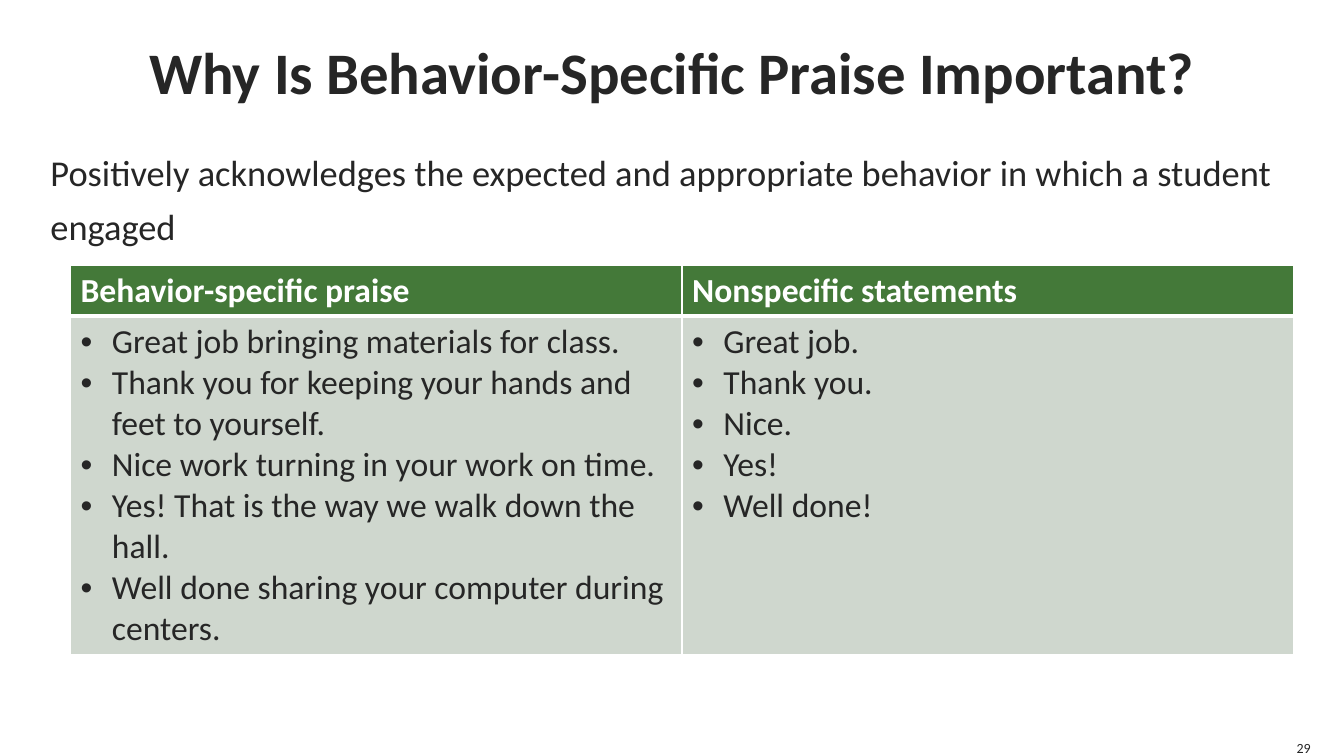
from lxml import etree
from pptx import Presentation
from pptx.dml.color import RGBColor
from pptx.enum.text import MSO_ANCHOR, MSO_AUTO_SIZE, PP_ALIGN
from pptx.oxml.ns import qn
from pptx.util import Inches, Pt

LEFT, CENTER, RIGHT = PP_ALIGN.LEFT, PP_ALIGN.CENTER, PP_ALIGN.RIGHT
TOP, MIDDLE, BOTTOM = MSO_ANCHOR.TOP, MSO_ANCHOR.MIDDLE, MSO_ANCHOR.BOTTOM
NO_AUTOFIT = MSO_AUTO_SIZE.NONE

# Content
TITLE = "Why Is Behavior-Specific Praise Important?"
INTRO = ("Positively acknowledges the expected and appropriate behavior "
         "in which a student engaged")
PRAISE_COLUMNS = {
    "Behavior-specific praise": [
        "Great job bringing materials for class.",
        "Thank you for keeping your hands and feet to yourself.",
        "Nice work turning in your work on time.",
        "Yes! That is the way we walk down the hall.",
        "Well done sharing your computer during centers.",
    ],
    "Nonspecific statements": [
        "Great job.", "Thank you.", "Nice.", "Yes!", "Well done!",
    ],
}
PAGE_NUMBER = "29"

# Look
FONT = "Calibri"
INK, WHITE, GREEN, SAGE = "262626", "FFFFFF", "447939", "CFD7CE"
SLIDE_W, SLIDE_H = 13.33, 7.5
MARGIN = 0.5
CONTENT_W = SLIDE_W - 2 * MARGIN
TABLE_LEFT, TABLE_TOP = 0.7, 2.63
TABLE_W = SLIDE_W - MARGIN - TABLE_LEFT
ROW_HEIGHTS = (0.5, 3.3)
BULLET_INDENT = 0.31


def color(hex_value):
    return RGBColor.from_string(hex_value)


def set_indent(paragraph, bullet=None):
    """Hang the text behind a bullet, or clear bullet and indent."""
    indent = Inches(BULLET_INDENT) if bullet else 0
    properties = paragraph._p.get_or_add_pPr()
    properties.set("marL", str(indent))
    properties.set("indent", str(-indent))
    if bullet:
        face = etree.SubElement(properties, qn("a:buFont"))
        face.set("typeface", "Arial")
        etree.SubElement(properties, qn("a:buChar")).set("char", bullet)
    else:
        etree.SubElement(properties, qn("a:buNone"))


def write(frame, lines, size, ink=INK, bold=False, align=LEFT,
          bullet=None, spacing=None):
    for index, line in enumerate(lines):
        paragraph = frame.add_paragraph() if index else frame.paragraphs[0]
        set_indent(paragraph, bullet)
        paragraph.alignment = align
        paragraph.space_before = Pt(0)
        if spacing:
            paragraph.line_spacing = spacing
        run = paragraph.add_run()
        run.text = line
        run.font.name = FONT
        run.font.size = Pt(size)
        run.font.bold = bold
        run.font.color.rgb = color(ink)


def place(shape, left, top, width, height, anchor, wrap=True):
    shape.left, shape.top = Inches(left), Inches(top)
    shape.width, shape.height = Inches(width), Inches(height)
    frame = shape.text_frame
    frame.margin_left = frame.margin_right = 0
    frame.margin_top = frame.margin_bottom = 0
    frame.vertical_anchor = anchor
    frame.word_wrap = wrap
    frame.auto_size = NO_AUTOFIT
    return frame


def set_borders(cell, widths):
    """Draw white borders; widths are left, right, top, bottom in points."""
    properties = cell._tc.get_or_add_tcPr()
    for index, (side, width) in enumerate(zip("LRTB", widths)):
        border = etree.Element(qn(f"a:ln{side}"), w=str(Pt(width)))
        fill = etree.SubElement(border, qn("a:solidFill"))
        etree.SubElement(fill, qn("a:srgbClr")).set("val", WHITE)
        properties.insert(index, border)


prs = Presentation()
prs.slide_width, prs.slide_height = Inches(SLIDE_W), Inches(SLIDE_H)
slide = prs.slides.add_slide(prs.slide_layouts[1])

# Title and introduction
title_frame = place(slide.shapes.title, MARGIN, 0, CONTENT_W, 1.4, MIDDLE)
write(title_frame, [TITLE], 42, bold=True, align=CENTER)
intro_frame = place(slide.placeholders[1], MARGIN, 1.38, CONTENT_W, 4.75, TOP)
write(intro_frame, [INTRO], 26, spacing=1.25)

# Comparison table
table = slide.shapes.add_table(
    len(ROW_HEIGHTS), len(PRAISE_COLUMNS), Inches(TABLE_LEFT),
    Inches(TABLE_TOP), Inches(TABLE_W), Inches(sum(ROW_HEIGHTS))).table
for row, height in zip(table.rows, ROW_HEIGHTS):
    row.height = Inches(height)
for column, (heading, examples) in enumerate(PRAISE_COLUMNS.items()):
    header, body = table.cell(0, column), table.cell(1, column)
    write(header.text_frame, [heading], 24, ink=WHITE, bold=True)
    write(body.text_frame, examples, 24, bullet="•")
    for cell, fill, widths in ((header, GREEN, (1, 1, 1, 3)),
                               (body, SAGE, (1, 1, 3, 1))):
        cell.fill.solid()
        cell.fill.fore_color.rgb = color(fill)
        set_borders(cell, widths)

# Page number
number_box = slide.shapes.add_textbox(0, 0, 0, 0)
number_frame = place(number_box, SLIDE_W - MARGIN, SLIDE_H - 0.17,
                     0.17, 0.17, BOTTOM, wrap=False)
write(number_frame, [PAGE_NUMBER], 10, align=RIGHT)

prs.save("out.pptx")
